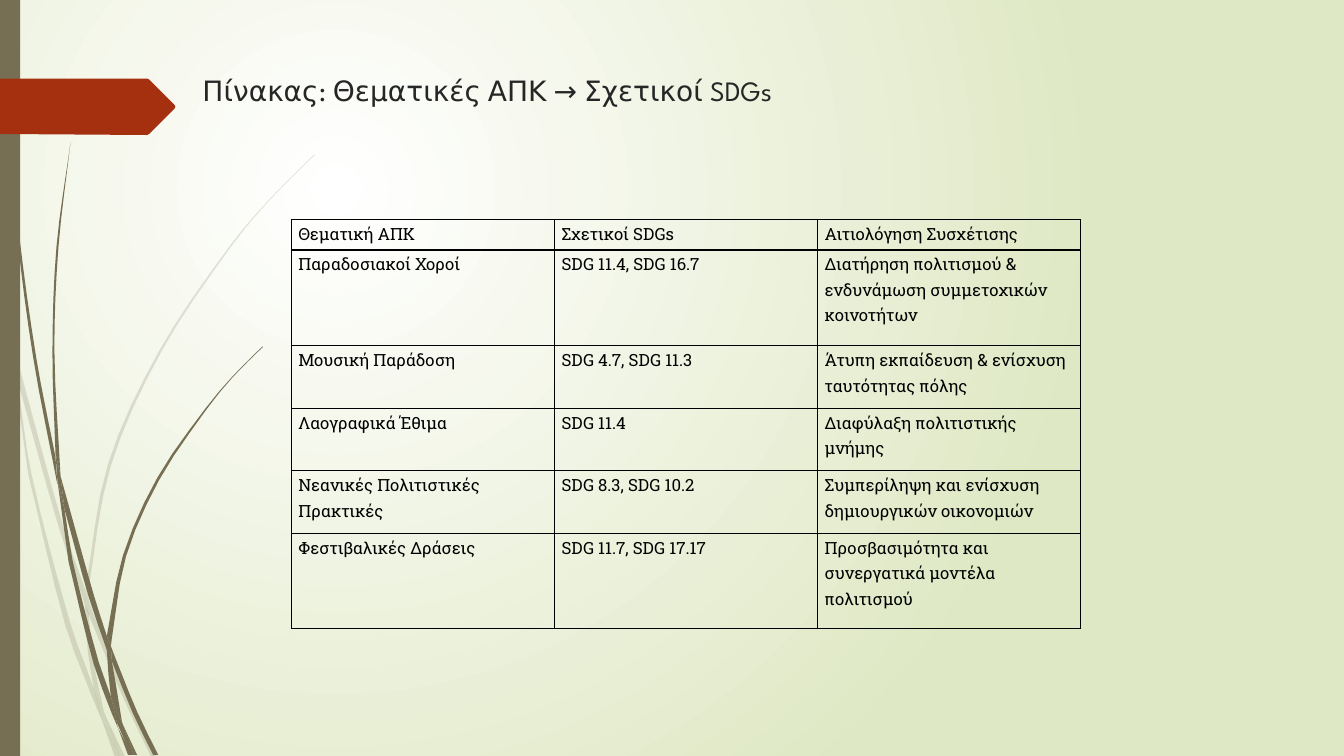
from math import ceil

from lxml import etree
from pptx import Presentation
from pptx.dml.color import RGBColor as RGB
from pptx.enum.shapes import MSO_SHAPE as SHAPE
from pptx.oxml.ns import qn
from pptx.util import Inches, Pt

THEME = {
    "olive": "766F54", "red": "A53010", "ink": "262626", "black": "000000",
    "glow": "FFFFFF", "edge": "DFE8C4", "faint": 20,
    "head": ("League Spartan", 20), "body": ("Roboto Slab", 12), "rule": 1,
}

TITLE = "Πίνακας: Θεματικές ΑΠΚ → Σχετικοί SDGs"
ROWS = [
    ("Θεματική ΑΠΚ", "Σχετικοί SDGs", "Αιτιολόγηση Συσχέτισης"),
    ("Παραδοσιακοί Χοροί", "SDG 11.4, SDG 16.7",
     "Διατήρηση πολιτισμού & ενδυνάμωση συμμετοχικών κοινοτήτων"),
    ("Μουσική Παράδοση", "SDG 4.7, SDG 11.3",
     "Άτυπη εκπαίδευση & ενίσχυση ταυτότητας πόλης"),
    ("Λαογραφικά Έθιμα", "SDG 11.4", "Διαφύλαξη πολιτιστικής μνήμης"),
    ("Νεανικές Πολιτιστικές Πρακτικές", "SDG 8.3, SDG 10.2",
     "Συμπερίληψη και ενίσχυση δημιουργικών οικονομιών"),
    ("Φεστιβαλικές Δράσεις", "SDG 11.7, SDG 17.17",
     "Προσβασιμότητα και συνεργατικά μοντέλα πολιτισμού"),
]
TALL = [0.3, 0.95, 0.62, 0.62, 0.62, 0.95]
COL = 2.61

# Each blade of grass is a pair of smooth edges, out and back.
PALE = [
    ([(.11, 3.5), (.09, 3.22), (0, 2.82)], [(0, 2.99), (.1, 3.44)]),
    ([(.17, 3.76), (.58, 5.22), (.84, 5.99)],
     [(.85, 5.86), (.62, 5.2), (.14, 3.45)]),
    ([(1.55, 7.51), (1.27, 6.92), (.92, 6.07), (.88, 5.96)],
     [(.88, 6.1), (1.23, 6.94), (1.5, 7.51)]),
    ([(1.19, 7.51), (1.24, 7.51)], [(1.05, 7.11)]),
    ([(1.01, 7.14), (.93, 6.83), (.7, 6.19), (.31, 4.69), (.17, 3.76), (.11, 3.5)],
     [(.28, 4.7), (.65, 6.21), (.92, 6.93)]),
    ([(1.05, 7.11), (1.03, 7.06), (.91, 6.46), (.88, 6.08), (.84, 5.99)],
     [(.87, 6.46), (.93, 6.83), (.96, 6.92)]),
    ([(.88, 5.96), (.88, 5.84), (1.1, 4.62), (1.6, 3.49), (2.29, 2.45),
      (2.68, 1.98), (3.12, 1.54)],
     [(3.12, 1.53), (2.68, 1.97), (2.28, 2.44), (1.58, 3.48),
      (1.07, 4.61), (.85, 5.84)]),
    ([(1.01, 7.14), (1.14, 7.51)], [(1.19, 7.51)]),
    ([(.88, 6.1), (.88, 5.96)], [(.85, 5.86), (.84, 5.99)]),
    ([(1.19, 7.51), (1.05, 7.11), (.96, 6.92), (.93, 6.83)],
     [(.99, 7.07), (1.01, 7.14)]),
]
DARK = [
    ([(.03, 0), (.07, 1.1), (.17, 2.33), (.33, 3.55), (.57, 4.81)],
     [(.55, 4.53), (.36, 3.55), (.19, 2.32), (.08, 1.09), (.04, 0)]),
    ([(.64, 5.05), (.88, 5.92), (1.06, 6.45)],
     [(1.06, 6.31), (.93, 5.9), (.6, 4.72)]),
    ([(1.57, 7.49), (1.36, 7.06), (1.13, 6.49), (1.1, 6.41)],
     [(1.11, 6.56), (1.32, 7.08), (1.52, 7.49)]),
    ([(1.17, 7.22), (1.1, 6.91), (.98, 6.57), (.72, 5.56), (.64, 5.05), (.57, 4.77)],
     [(.68, 5.57), (.93, 6.59), (1.11, 7.08)]),
    ([(.6, 4.72), (.54, 3.49), (.58, 2.45), (.7, 1.41)],
     [(.7, 1.41), (.56, 2.45), (.52, 3.49), (.55, 4.49)]),
    ([(1.33, 7.49), (1.36, 7.49)], [(1.22, 7.19)]),
    ([(.57, 4.77), (.64, 5.05)], [(.6, 4.72), (.55, 4.49)]),
    ([(1.1, 6.41), (1.11, 6.33), (1.25, 5.52), (1.58, 4.76), (2.05, 4.06),
      (2.31, 3.74), (2.61, 3.44)],
     [(2.6, 3.44), (2.31, 3.73), (2.04, 4.05), (1.56, 4.74),
      (1.22, 5.51), (1.06, 6.31)]),
    ([(1.17, 7.22), (1.27, 7.49)], [(1.31, 7.49)]),
    ([(1.06, 6.45), (1.1, 6.91), (1.16, 7.06), (1.22, 7.19)],
     [(1.21, 7.16), (1.11, 6.56), (1.09, 6.51)]),
    ([(1.06, 6.45), (1.11, 6.56)], [(1.1, 6.41), (1.06, 6.31)]),
    ([(1.33, 7.49), (1.22, 7.19), (1.16, 7.06), (1.1, 6.91)],
     [(1.16, 7.17), (1.3, 7.49)]),
]
FLAG = [(0, .78), (1.46, .78), (1.48, .79), (1.73, 1.04), (1.74, 1.06),
        (1.73, 1.08), (1.48, 1.33), (1.46, 1.34), (0, 1.33)]


def bend(edge):
    """Points along a smooth curve through every point of the edge."""
    if len(edge) < 3:
        return edge
    pts = [complex(*p) for p in edge]
    ways = [b - a for a, b in zip(pts[:1] + pts, pts[1:] + pts[-1:])]
    ways = [w / abs(w) for w in ways]
    out = [pts[0]]
    for a, b, u, v in zip(pts, pts[1:], ways, ways[1:]):
        gap = abs(b - a)
        c, d = a + u * gap / 3, b - v * gap / 3
        steps = min(4, ceil(gap / 0.3))
        for i in range(1, steps + 1):
            t = i / steps
            s = 1 - t
            out.append(s**3 * a + 3 * s * s * t * c + 3 * s * t * t * d + t**3 * b)
    return [(p.real, p.imag) for p in out]


def paint(shape, tint, alpha=None):
    shape.shadow.inherit = False
    shape.fill.solid()
    shape.fill.fore_color.rgb = RGB.from_string(tint)
    shape.line.fill.background()
    if alpha:
        node = shape.element.spPr.find(".//" + qn("a:srgbClr"))
        etree.SubElement(node, qn("a:alpha"), val=str(alpha * 1000))


def outline(slide, pts, tint, alpha=None):
    first, *rest = [(Inches(x), Inches(y)) for x, y in pts]
    pen = slide.shapes.build_freeform(*first)
    pen.add_line_segments(rest, close=True)
    paint(pen.convert_to_shape(), tint, alpha)


def style(para, text, face, tint):
    para.text = text
    para.font.name, size = face
    para.font.size = Pt(size)
    para.font.color.rgb = RGB.from_string(tint)


def backdrop(slide):
    fill = slide.background.fill
    fill.gradient()
    for stop, tint in zip(fill.gradient_stops, (THEME["glow"], THEME["edge"])):
        stop.color.rgb = RGB.from_string(tint)
    grad = slide.element.find(".//" + qn("a:gradFill"))
    grad.remove(grad.find(qn("a:lin")))
    ring = etree.SubElement(grad, qn("a:path"), path="circle")
    etree.SubElement(ring, qn("a:fillToRect"), l="50000", t="50000",
                     r="100000", b="100000")


def border(cell):
    props = cell._tc.get_or_add_tcPr()
    for side in "LRTB":
        line = etree.SubElement(props, qn("a:ln" + side), w=str(Pt(THEME["rule"])))
        solid = etree.SubElement(line, qn("a:solidFill"))
        etree.SubElement(solid, qn("a:srgbClr"), val=THEME["black"])


def grid(slide):
    table = slide.shapes.add_table(
        len(ROWS), len(ROWS[0]), Inches(2.89), Inches(2.18),
        Inches(COL * len(ROWS[0])), Inches(sum(TALL))).table
    table.first_row = table.horz_banding = False
    for col in table.columns:
        col.width = Inches(COL)
    for row, tall, texts in zip(table.rows, TALL, ROWS):
        row.height = Inches(tall)
        for cell, text in zip(row.cells, texts):
            border(cell)
            cell.fill.background()
            cell.margin_left = cell.margin_right = Inches(0.07)
            cell.margin_top = cell.margin_bottom = 0
            para = cell.text_frame.paragraphs[0]
            style(para, text, THEME["body"], THEME["black"])
            para.line_spacing = 1.15
            para.space_after = Pt(10)


def main():
    deck = Presentation()
    deck.slide_width, deck.slide_height = Inches(13.33), Inches(7.5)
    slide = deck.slides.add_slide(deck.slide_layouts[6])
    backdrop(slide)
    for blades, alpha in ((PALE, THEME["faint"]), (DARK, None)):
        for out, back in blades:
            outline(slide, bend(out) + bend(back), THEME["olive"], alpha)
    bar = slide.shapes.add_shape(SHAPE.RECTANGLE, 0, 0, Inches(0.2), Inches(7.5))
    paint(bar, THEME["olive"])
    outline(slide, FLAG, THEME["red"])
    box = slide.shapes.add_textbox(Inches(1.91), Inches(0.68),
                                   Inches(10.68), Inches(0.67))
    box.text_frame.word_wrap = True
    style(box.text_frame.paragraphs[0], TITLE, THEME["head"], THEME["ink"])
    grid(slide)
    deck.save("out.pptx")


if __name__ == "__main__":
    main()
